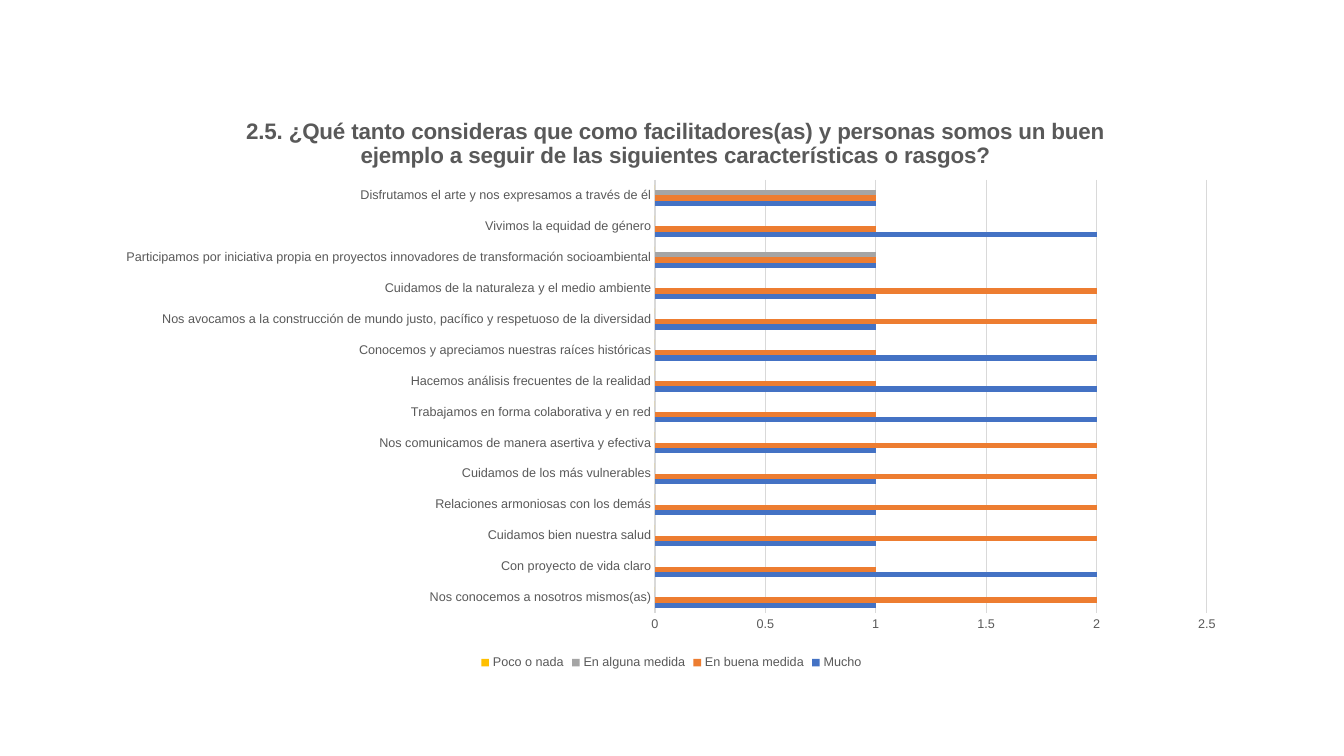
from dataclasses import dataclass

from lxml.etree import SubElement, _Element as Element
from pptx import Presentation
from pptx.chart.axis import _BaseAxis as Axis
from pptx.chart.chart import Chart
from pptx.chart.data import CategoryChartData as ChartData
from pptx.dml.color import RGBColor
from pptx.enum.chart import XL_CHART_TYPE as ChartType
from pptx.enum.chart import XL_LEGEND_POSITION as LegendPosition
from pptx.enum.chart import XL_TICK_MARK as TickMark
from pptx.oxml.ns import qn
from pptx.text.text import Font, TextFrame
from pptx.util import Emu, Pt

EMU_PER_PX = 914400 / 100.8
COLORS = {
    "text": "595959",
    "line": "D9D9D9",
    "blue": "4472C4",
    "orange": "ED7D31",
    "gray": "A5A5A5",
    "yellow": "FFC000",
}


@dataclass(frozen=True)
class Box:
    left: int
    top: int
    width: int = 0
    height: int = 0


@dataclass(frozen=True)
class Answer:
    name: str
    color: str
    values: tuple[int, ...]


SLIDE = Box(0, 0, 1344, 756)
CHART = Box(104, 89, 1135, 585)
PLOT = Box(655, 180, 552, 433)
TITLE = Box(242, 113)
QUESTION = (
    "2.5. ¿Qué tanto consideras que como facilitadores(as) y personas somos un buen "
    "ejemplo a seguir de las siguientes características o rasgos?"
)
TRAITS = (
    "Nos conocemos a nosotros mismos(as)",
    "Con proyecto de vida claro",
    "Cuidamos bien nuestra salud",
    "Relaciones armoniosas con los demás",
    "Cuidamos de los más vulnerables",
    "Nos comunicamos de manera asertiva y efectiva",
    "Trabajamos en forma colaborativa y en red",
    "Hacemos análisis frecuentes de la realidad",
    "Conocemos y apreciamos nuestras raíces históricas",
    "Nos avocamos a la construcción de mundo justo, pacífico y respetuoso de la diversidad",
    "Cuidamos de la naturaleza y el medio ambiente",
    "Participamos por iniciativa propia en proyectos innovadores de transformación socioambiental",
    "Vivimos la equidad de género",
    "Disfrutamos el arte y nos expresamos a través de él",
)
ANSWERS = (
    Answer("Mucho", "blue", (1, 2, 1, 1, 1, 1, 2, 2, 2, 1, 1, 1, 2, 1)),
    Answer("En buena medida", "orange", (2, 1, 2, 2, 2, 2, 1, 1, 1, 2, 2, 1, 1, 1)),
    Answer("En alguna medida", "gray", (0, 0, 0, 0, 0, 0, 0, 0, 0, 0, 0, 1, 0, 1)),
    Answer("Poco o nada", "yellow", (0,) * len(TRAITS)),
)


def px(length: int) -> Emu:
    return Emu(round(length * EMU_PER_PX))


def rgb(color: str) -> RGBColor:
    return RGBColor.from_string(COLORS[color])


def format_font(font: Font, size: int = 9, bold: bool = False, color: str = "text") -> None:
    font.name = "Arial"
    font.size = Pt(size)
    font.bold = bold
    font.color.rgb = rgb(color)


def write_text(frame: TextFrame, text: str, *, size: int, bold: bool, color: str) -> None:
    run = frame.paragraphs[0].add_run()
    run.text = text
    format_font(run.font, size, bold, color)


def place(element: Element, box: Box, index: int) -> None:
    for old_layout in element.findall(qn("c:layout")):
        element.remove(old_layout)
    layout = SubElement(element, qn("c:layout"))
    element.insert(index, layout)
    manual = SubElement(layout, qn("c:manualLayout"))
    settings = {}
    if box.width:
        settings["layoutTarget"] = "inner"
    settings |= {
        "xMode": "edge",
        "yMode": "edge",
        "x": (box.left - CHART.left) / CHART.width,
        "y": (box.top - CHART.top) / CHART.height,
    }
    if box.width:
        settings |= {"w": box.width / CHART.width, "h": box.height / CHART.height}
    for name, value in settings.items():
        SubElement(manual, qn(f"c:{name}")).set("val", str(value))


def format_axis(axis: Axis) -> None:
    axis.major_tick_mark = TickMark.NONE
    axis.minor_tick_mark = TickMark.NONE
    format_font(axis.tick_labels.font)


def format_axes(chart: Chart) -> None:
    trait_axis, value_axis = chart.category_axis, chart.value_axis
    for axis in (trait_axis, value_axis):
        format_axis(axis)
    value_axis.minimum_scale = 0
    value_axis.maximum_scale = 2.5
    value_axis.major_unit = 0.5
    value_axis.format.line.fill.background()
    value_axis.has_major_gridlines = True
    for line in (trait_axis.format.line, value_axis.major_gridlines.format.line):
        line.color.rgb = rgb("line")
        line.width = Pt(0.75)


def format_series(chart: Chart) -> None:
    plot = chart.plots[0]
    plot.gap_width = 182
    plot.overlap = 0
    plot.vary_by_categories = False
    for series, answer in zip(plot.series, ANSWERS):
        series.format.fill.solid()
        series.format.fill.fore_color.rgb = rgb(answer.color)


def main() -> None:
    presentation = Presentation()
    presentation.slide_width = px(SLIDE.width)
    presentation.slide_height = px(SLIDE.height)
    slide = presentation.slides.add_slide(presentation.slide_layouts[6])

    data = ChartData()
    data.categories = TRAITS
    for answer in ANSWERS:
        data.add_series(answer.name, answer.values)
    chart = slide.shapes.add_chart(
        ChartType.BAR_CLUSTERED,
        px(CHART.left), px(CHART.top), px(CHART.width), px(CHART.height),
        data,
    ).chart
    format_font(chart.font, size=10)

    chart.has_title = True
    title = chart.chart_title
    write_text(title.text_frame, QUESTION, size=16, bold=True, color="text")
    title.include_in_layout = False
    place(title._element, TITLE, 1)
    place(chart._chartSpace.chart.plotArea, PLOT, 0)

    format_axes(chart)
    format_series(chart)

    chart.has_legend = True
    chart.legend.position = LegendPosition.BOTTOM
    chart.legend.include_in_layout = False
    format_font(chart.legend.font)
    presentation.save("out.pptx")


if __name__ == "__main__":
    main()
